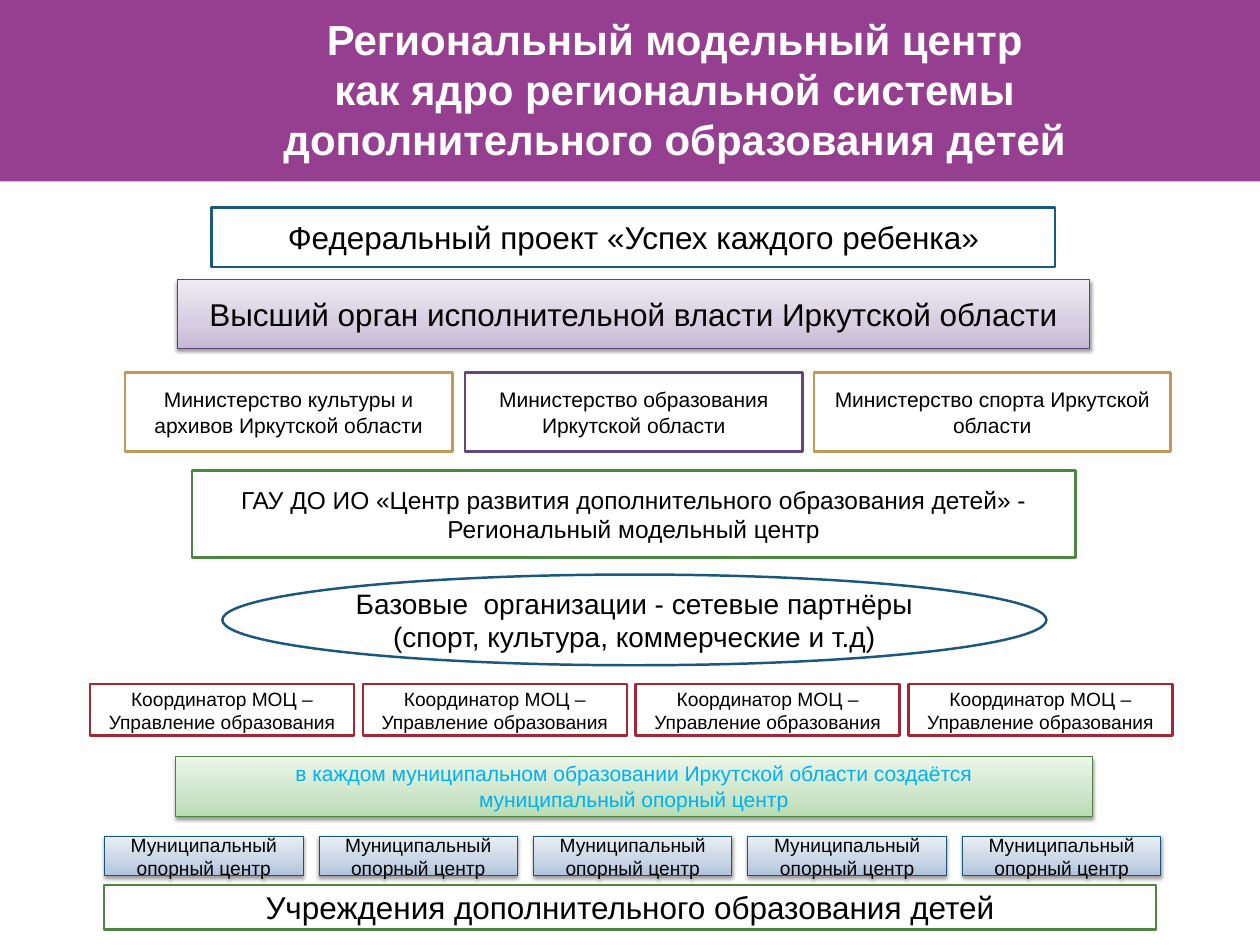
from lxml import etree
from pptx import Presentation
from pptx.dml.color import RGBColor
from pptx.enum import shapes, text
from pptx.oxml.ns import qn
from pptx.util import Inches, Pt

WIDTH, HEIGHT = Inches(14.22), Inches(10.67)
FONT = "Arial"
COLORS = {
    "band": "963F90", "white": "FFFFFF", "black": "000000", "sky": "00B0F0",
    "blue": "1B587C", "violet": "604878", "sand": "C19859",
    "green": "4E8542", "red": "9F2936",
    "violet edge": "5E4577", "green edge": "4B843F", "blue edge": "18577C",
}
# Stops run from the bottom edge to the top edge.
GRADIENTS = {
    "violet edge": ("C4B8D4", "D5CDE0", "EFECF4"),
    "green edge": ("B8DCB3", "CDE5CA", "ECF6EA"),
    "blue edge": ("AFC2DA", "C7D4E4", "EAEFF5"),
}
STOPS = (0, 35, 100)


def color(name):
    return RGBColor.from_string(COLORS[name])


def place(left, top, width, height):
    """Turn percentages of the slide's size into lengths."""
    return (int(WIDTH * left / 100), int(HEIGHT * top / 100),
            int(WIDTH * width / 100), int(HEIGHT * height / 100))


def write(box, wording, size, ink="black", bold=False,
          anchor=text.MSO_ANCHOR.MIDDLE):
    frame = box.text_frame
    frame.word_wrap = True
    frame.vertical_anchor = anchor
    frame.text = wording
    for para in frame.paragraphs:
        para.alignment = text.PP_ALIGN.CENTER
        for span in para.runs:
            span.font.name = FONT
            span.font.size = Pt(size)
            span.font.bold = bold
            span.font.color.rgb = color(ink)


def add_outlined(page, area, wording, size, edge,
                 kind=shapes.MSO_SHAPE.RECTANGLE):
    box = page.shapes.add_shape(kind, *place(*area))
    box.shadow.inherit = False
    box.fill.solid()
    box.fill.fore_color.rgb = color("white")
    box.line.color.rgb = color(edge)
    box.line.width = Pt(2)
    write(box, wording, size)


def set_gradient(box, hues):
    box.fill.gradient()
    box.fill.gradient_angle = 90
    stops = box.fill._fill._gradFill.find(qn("a:gsLst"))
    for stop in list(stops):
        stops.remove(stop)
    for position, hue in zip(STOPS, hues):
        stop = etree.SubElement(stops, qn("a:gs"), pos=str(position * 1000))
        etree.SubElement(stop, qn("a:srgbClr"), val=hue)


def set_shadow(box):
    box.shadow.inherit = False
    effects = box._element.spPr.find(qn("a:effectLst"))
    shadow = etree.SubElement(effects, qn("a:outerShdw"), blurRad="40000",
                              dist="20000", dir="5400000", rotWithShape="0")
    hue = etree.SubElement(shadow, qn("a:srgbClr"), val=COLORS["black"])
    etree.SubElement(hue, qn("a:alpha"), val="38000")


def add_raised(page, area, wording, size, edge, **style):
    """Add a box with a gradient fill and a soft shadow."""
    box = page.shapes.add_shape(shapes.MSO_SHAPE.RECTANGLE, *place(*area))
    set_gradient(box, GRADIENTS[edge])
    box.line.color.rgb = color(edge)
    box.line.width = Pt(0.75)
    set_shadow(box)
    write(box, wording, size, **style)


def add_header(page):
    band = page.shapes.add_shape(shapes.MSO_SHAPE.RECTANGLE,
                                 *place(0, 0, 100, 19.2))
    band.shadow.inherit = False
    band.fill.solid()
    band.fill.fore_color.rgb = color("band")
    band.line.fill.background()
    title = page.shapes.add_textbox(*place(18.1, 0.6, 70.9, 17.6))
    write(title, "Региональный модельный центр\v"
                 "как ядро региональной системы\v"
                 "дополнительного образования детей", 34.1, "white", True)


def add_ministries(page):
    ministries = (
        (9.9, 26, "sand", "Министерство культуры и архивов Иркутской области"),
        (36.9, 26.8, "violet", "Министерство образования Иркутской области"),
        (64.6, 28.3, "sand", "Министерство спорта Иркутской области"),
    )
    for left, width, edge, wording in ministries:
        add_outlined(page, (left, 39.4, width, 8.4), wording, 17.1, edge)


def add_row(page, add_box, count, first, step, wording, edge):
    """Repeat one box at equal steps; first is the area of the leftmost."""
    left, *rest = first
    for index in range(count):
        add_box(page, (left + index * step, *rest), wording, 15.6, edge)


def main():
    deck = Presentation()
    deck.slide_width, deck.slide_height = WIDTH, HEIGHT
    page = deck.slides.add_slide(deck.slide_layouts[6])

    add_header(page)
    add_outlined(page, (16.8, 21.95, 66.95, 6.3),
                 "Федеральный проект «Успех каждого ребенка»", 25.6, "blue")
    add_raised(page, (14.05, 29.6, 72.45, 7.3),
               "Высший орган исполнительной власти Иркутской области",
               25.6, "violet edge")
    add_ministries(page)
    add_outlined(page, (15.25, 49.8, 70.1, 9.2),
                 "ГАУ ДО ИО «Центр развития дополнительного образования "
                 "детей» - Региональный модельный центр", 19.9, "green")
    add_outlined(page, (17.65, 60.8, 65.4, 9.6),
                 "Базовые  организации - сетевые партнёры "
                 "(спорт, культура, коммерческие и т.д)", 22.8, "blue",
                 shapes.MSO_SHAPE.OVAL)
    add_row(page, add_outlined, 4, (7.15, 72.4, 20.95, 5.45), 21.65,
            "Координатор МОЦ – Управление образования", "red")
    add_raised(page, (13.9, 80.05, 72.8, 6.4),
               "в каждом муниципальном образовании Иркутской области "
               "создаётся\nмуниципальный опорный центр", 17.1, "green edge",
               ink="sky", anchor=text.MSO_ANCHOR.TOP)
    add_row(page, add_raised, 5, (8.3, 88.5, 15.75, 4.2), 17.02,
            "Муниципальный опорный центр", "blue edge")
    add_outlined(page, (8.25, 93.65, 83.5, 4.7),
                 "Учреждения дополнительного образования детей",
                 25.6, "green")

    deck.save("out.pptx")


if __name__ == "__main__":
    main()
